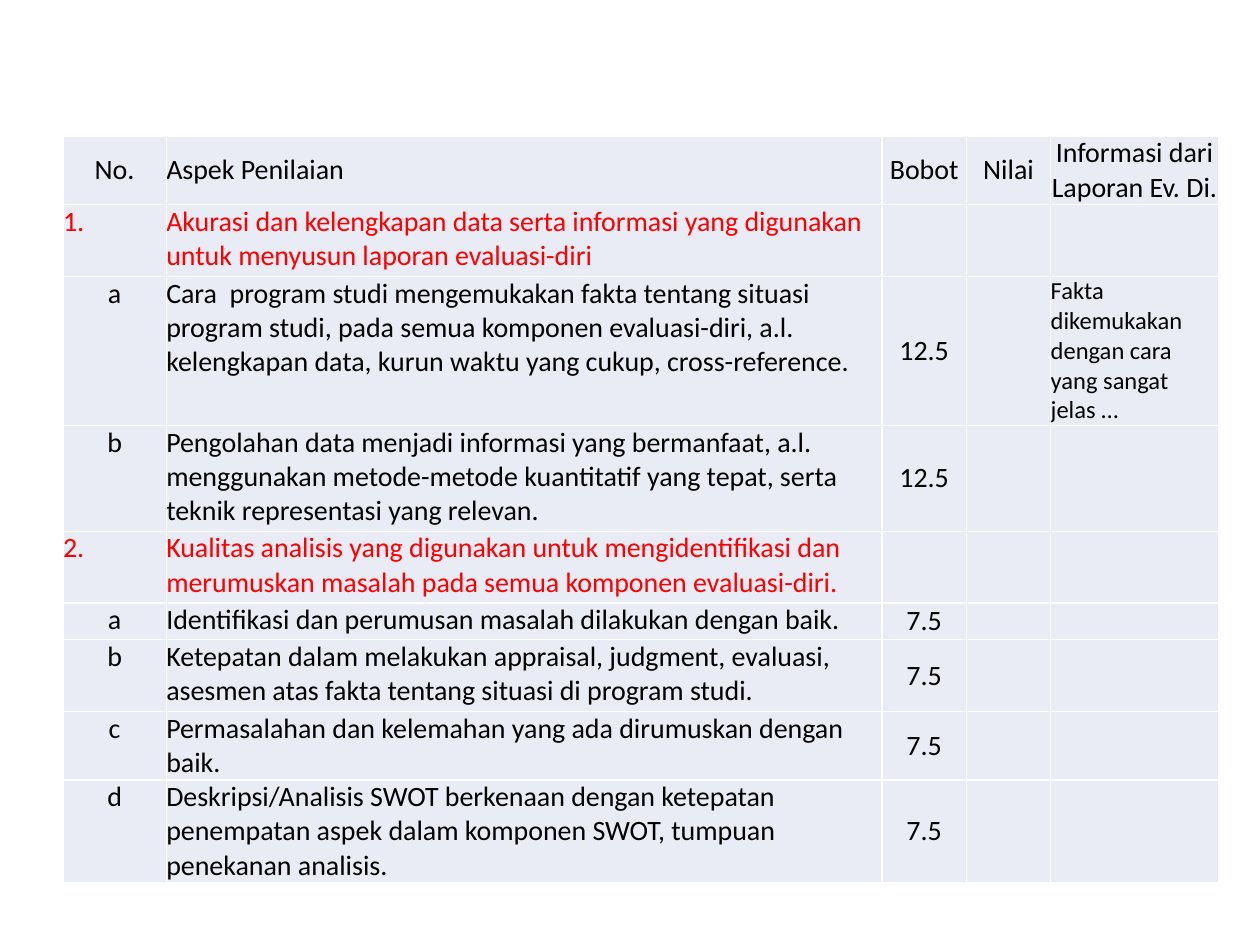
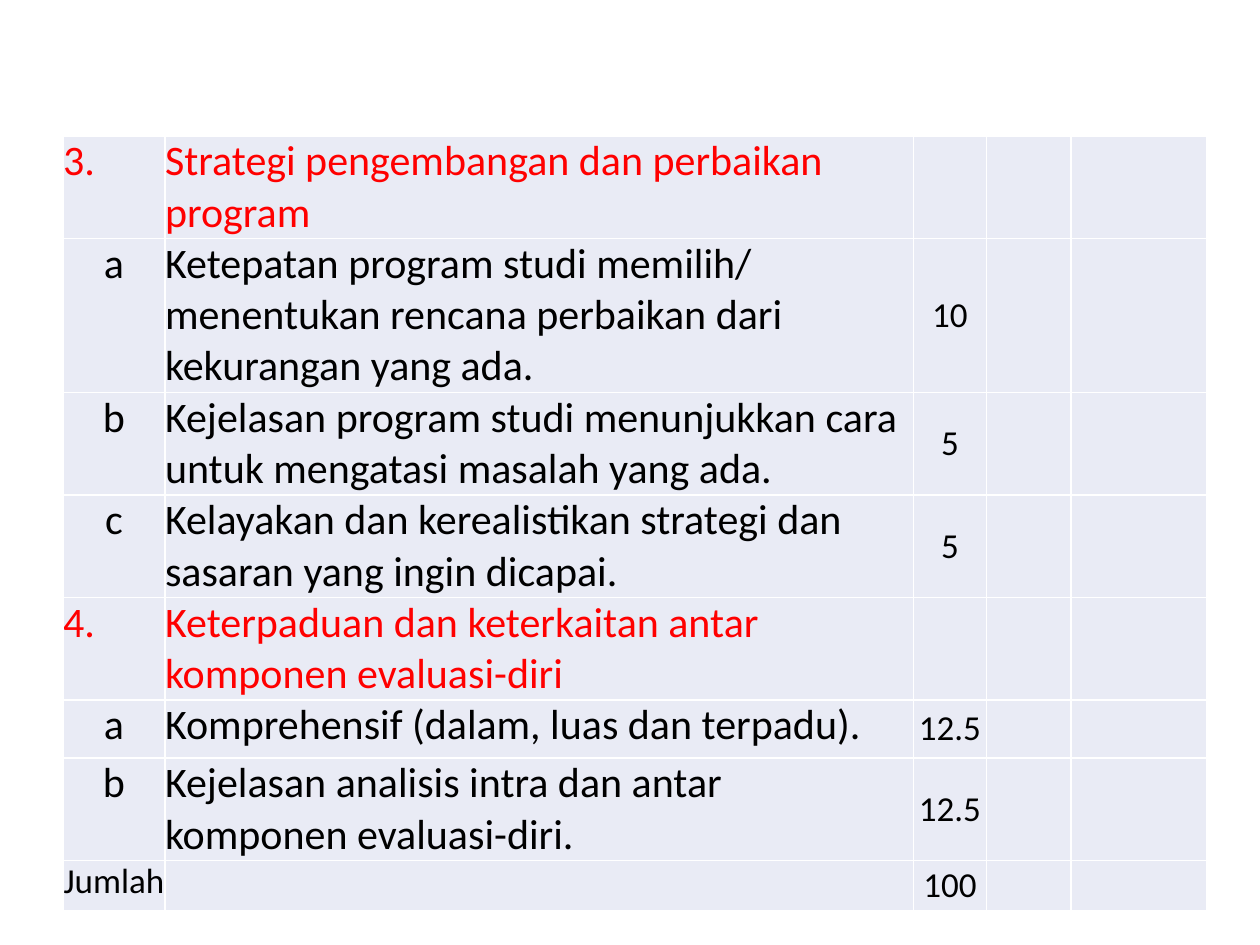
from pptx import Presentation
from pptx.dml.color import RGBColor as Rgb
from pptx.enum.text import MSO_ANCHOR as Anchor, PP_ALIGN as Align
from pptx.oxml import parse_xml
from pptx.oxml.ns import nsdecls
from pptx.util import Inches, Pt

HUES = {"text": "000000", "head": "FF0000", "cell": "E9EBF5", "line": "FFFFFF"}
FONT = "Calibri"
LEFT, TOP = 0.5, 1.08

FIRST = [
    ("No.", "Aspek Penilaian", "Bobot", "Nilai", "Informasi dari Laporan Ev. Di."),
    ("1.", "Akurasi dan kelengkapan data serta informasi yang digunakan "
     "untuk menyusun laporan evaluasi-diri"),
    ("a", "Cara  program studi mengemukakan fakta tentang situasi program studi, "
     "pada semua komponen evaluasi-diri, a.l. kelengkapan data, kurun waktu yang "
     "cukup, cross-reference.", "12.5", "",
     "Fakta dikemukakan dengan cara yang sangat jelas …"),
    ("b", "Pengolahan data menjadi informasi yang bermanfaat, a.l. menggunakan "
     "metode-metode kuantitatif yang tepat, serta teknik representasi yang relevan.",
     "12.5"),
    ("2.", "Kualitas analisis yang digunakan untuk mengidentifikasi dan merumuskan "
     "masalah pada semua komponen evaluasi-diri."),
    ("a", "Identifikasi dan perumusan masalah dilakukan dengan baik.", "7.5"),
    ("b", "Ketepatan dalam melakukan appraisal, judgment, evaluasi, asesmen atas "
     "fakta tentang situasi di program studi.", "7.5"),
    ("c", "Permasalahan dan kelemahan yang ada dirumuskan dengan baik.", "7.5"),
    ("d", "Deskripsi/Analisis SWOT berkenaan dengan ketepatan penempatan aspek "
     "dalam komponen SWOT, tumpuan penekanan analisis.", "7.5"),
]
SECOND = [
    ("3.", "Strategi pengembangan dan perbaikan program"),
    ("a", "Ketepatan program studi memilih/ menentukan rencana perbaikan dari "
     "kekurangan yang ada.", "10"),
    ("b", "Kejelasan program studi menunjukkan cara untuk mengatasi masalah yang ada.",
     "5"),
    ("c", "Kelayakan dan kerealistikan strategi dan sasaran yang ingin dicapai.", "5"),
    ("4.", "Keterpaduan dan keterkaitan antar komponen evaluasi-diri"),
    ("a", "Komprehensif (dalam, luas dan terpadu).", "12.5"),
    ("b", "Kejelasan analisis intra dan antar komponen evaluasi-diri.", "12.5"),
    ("Jumlah", "", "100"),
]


def add_edges(cell):
    props = cell._tc.get_or_add_tcPr()
    for side in ("lnL", "lnR", "lnT", "lnB"):
        props.append(parse_xml(
            f'<a:{side} {nsdecls("a")} w="{Pt(1)}"><a:solidFill>'
            f'<a:srgbClr val="{HUES["line"]}"/></a:solidFill></a:{side}>'))


def fill_cell(cell, text, size, hue, align, anchor):
    cell.margin_left = cell.margin_right = 0
    cell.margin_top = cell.margin_bottom = 0
    cell.vertical_anchor = anchor
    add_edges(cell)
    cell.fill.solid()
    cell.fill.fore_color.rgb = Rgb.from_string(HUES["cell"])
    cell.text = text
    para = cell.text_frame.paragraphs[0]
    para.alignment = align
    para.font.name = FONT
    para.font.size = Pt(size)
    para.font.bold = False
    para.font.color.rgb = Rgb.from_string(HUES[hue])


def fill_row(cells, texts, sizes):
    mark = texts[0]
    title = mark == "No."
    group = mark[0].isdigit()
    hue = "head" if group else "text"
    for col, cell in enumerate(cells):
        text = texts[col] if col < len(texts) else ""
        size = sizes["score"] if mark == "Jumlah" or col in (2, 3) else sizes["body"]
        if col == 4 and not title:
            size = sizes["note"]
        mid = col in (2, 3) or title and col == 4 or col == 0 and not group
        align = Align.CENTER if mid else Align.LEFT
        anchor = Anchor.MIDDLE if title or col == 2 else Anchor.TOP
        fill_cell(cell, text, size, hue, align, anchor)


def add_rubric(deck, rows, widths, heights, sizes):
    slide = deck.slides.add_slide(deck.slide_layouts[6])
    table = slide.shapes.add_table(
        len(rows), len(widths), Inches(LEFT), Inches(TOP),
        Inches(sum(widths)), Inches(sum(heights))).table
    table.first_row = table.horz_banding = False
    for col, width in zip(table.columns, widths):
        col.width = Inches(width)
    for row, height, texts in zip(table.rows, heights, rows):
        row.height = Inches(height)
        fill_row(row.cells, texts, sizes)


def main():
    deck = Presentation()
    deck.slide_width, deck.slide_height = Inches(10), Inches(7.5)
    add_rubric(deck, FIRST, [0.82, 5.68, 0.67, 0.67, 1.33],
               [0.53, 0.57, 1.17, 0.84, 0.57, 0.29, 0.57, 0.53, 0.8],
               {"body": 16, "score": 16, "note": 14})
    add_rubric(deck, SECOND, [0.81, 5.94, 0.58, 0.67, 1.08],
               [0.8, 1.2, 0.8, 0.8, 0.8, 0.46, 0.8, 0.4],
               {"body": 24, "score": 20, "note": 20})
    deck.save("out.pptx")


if __name__ == "__main__":
    main()
